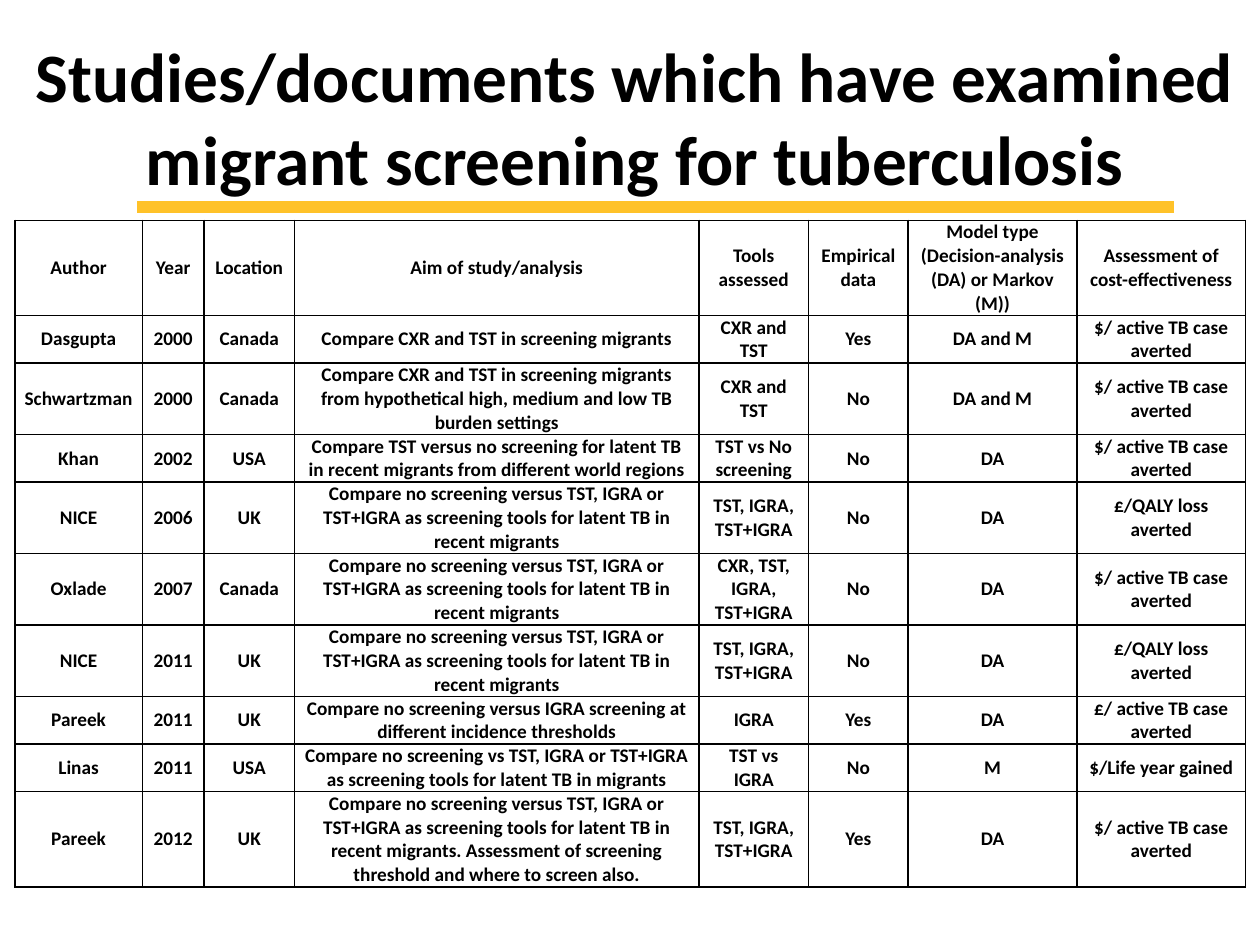
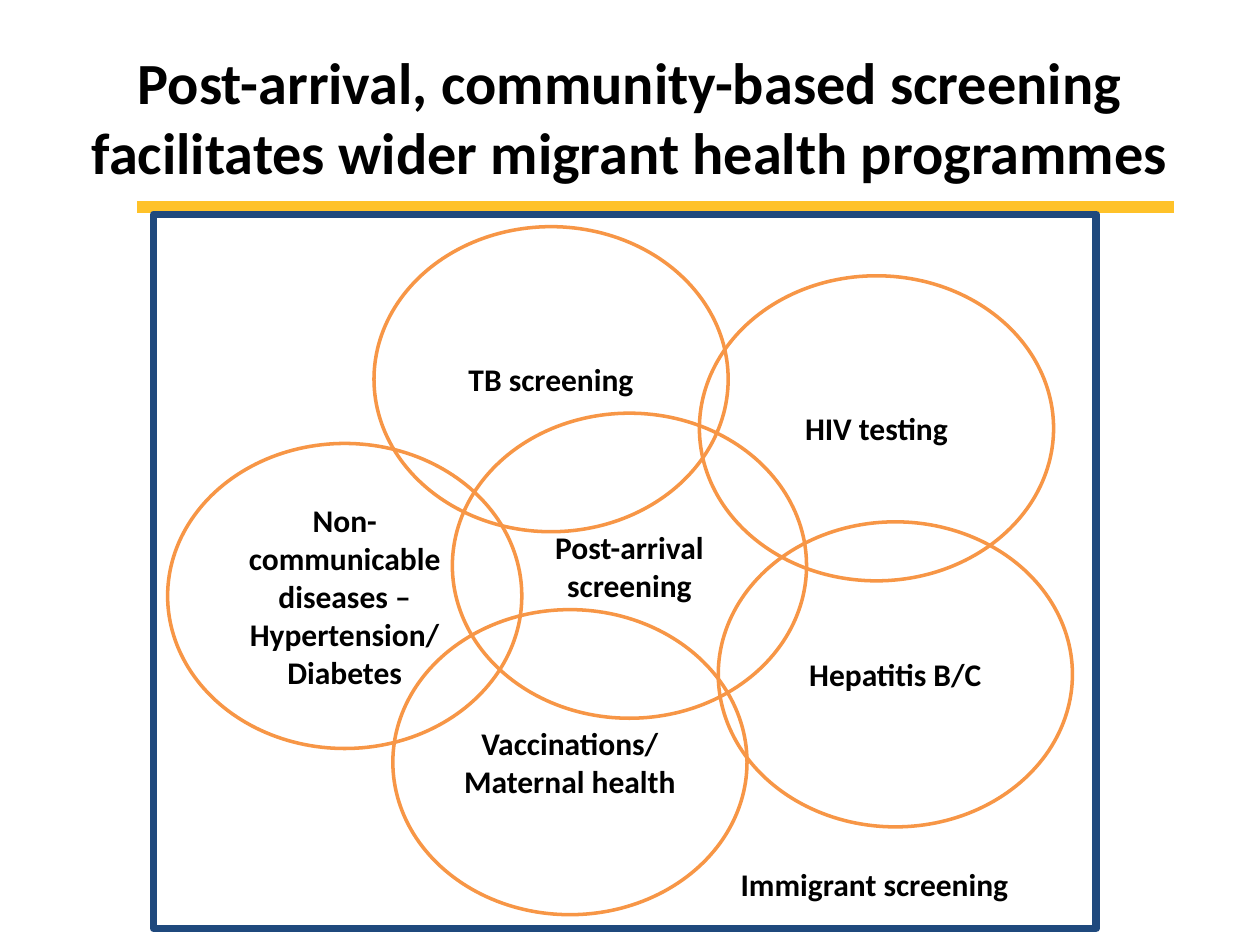
"""Build two slides on migrant screening: a table of studies and a diagram of programmes."""
from lxml.etree import SubElement
from pptx import Presentation
from pptx.dml.color import RGBColor
from pptx.enum.shapes import MSO_CONNECTOR as Link, MSO_SHAPE as Form
from pptx.enum.text import MSO_ANCHOR as Anchor, MSO_AUTO_SIZE as Fit, PP_ALIGN as Align
from pptx.oxml import parse_xml
from pptx.oxml.ns import qn
from pptx.util import Cm, Pt

FONT = "Calibri"
BLACK, WHITE, GOLD, ORANGE, NAVY = "000000", "FFFFFF", "FFC229", "F79646", "1F497D"
NS = "http://schemas.openxmlformats.org/drawingml/2006/main"

BAND = (2.77, 4.17, 23.67, 4.17)
STUDY = ("Studies/documents which have examined migrant screening for tuberculosis",
         39.6, (0.1, 0.76, 25.4, 3.18))
WIDER = ("Post-arrival, community-based screening facilitates wider migrant health programmes",
         33.3, (1.27, 0.76, 22.86, 3.18))

HEADS = ("Author", "Year", "Location", "Aim of study/analysis", "Tools assessed",
         "Empirical data", "Model type\n(Decision-analysis\n(DA) or Markov (M))",
         "Assessment of\ncost-effectiveness")
AIM = "Compare no screening versus TST, IGRA or TST+IGRA as screening tools for latent TB in recent migrants"
TRIO = "TST, IGRA, TST+IGRA"
CASE = "$/ active TB case averted"
QALY = "£/QALY loss averted"
ROWS = [
    HEADS,
    ("Dasgupta", "2000", "Canada", "Compare CXR and TST in screening migrants",
     "CXR and TST", "Yes", "DA and M", CASE),
    ("Schwartzman", "2000", "Canada",
     "Compare CXR and TST in screening migrants from hypothetical high, medium and low TB burden settings",
     "CXR and TST", "No", "DA and M", CASE),
    ("Khan", "2002", "USA",
     "Compare TST versus no screening for latent TB in recent migrants from different world regions",
     "TST vs No screening", "No", "DA", CASE),
    ("NICE", "2006", "UK", AIM, TRIO, "No", "DA", QALY),
    ("Oxlade", "2007", "Canada", AIM, "CXR, " + TRIO, "No", "DA", CASE),
    ("NICE", "2011", "UK", AIM, TRIO, "No", "DA", QALY),
    ("Pareek", "2011", "UK",
     "Compare no screening versus IGRA screening at different incidence thresholds",
     "IGRA", "Yes", "DA", "£/ active TB case averted"),
    ("Linas", "2011", "USA",
     "Compare no screening vs TST, IGRA or TST+IGRA as screening tools for latent TB in migrants",
     "TST vs IGRA", "No", "M", "$/Life year gained"),
    ("Pareek", "2012", "UK",
     AIM + ". Assessment of screening threshold and where to screen also.",
     TRIO, "Yes", "DA", CASE),
]
LINES = (4, 2, 3, 2, 3, 3, 3, 2, 2, 4)
PITCH = 0.48
COLS = (2.57, 1.24, 1.83, 8.15, 2.21, 2.01, 3.4, 3.4)
GRID = (0.3, 4.44)

OVAL = (7.14, 6.15)
RINGS = [
    ("Post-arrival screening", 9.12, 8.33, WHITE),
    ("HIV testing", 14.1, 5.56, None),
    ("Non-communicable diseases – Hypertension/\nDiabetes", 3.38, 8.94, None),
    ("Vaccinations/\nMaternal health", 7.92, 12.29, None),
    ("Hepatitis B/C", 14.48, 10.52, None),
    ("TB screening", 7.54, 4.57, None),
]
FRAME = (3.1, 4.32, 19, 14.4)
LABEL = ("Immigrant screening", (14.68, 17.32, 6.55, 1.02))


def tint(code):
    return RGBColor.from_string(code)


def cms(vals):
    return [Cm(val) for val in vals]


def write(frame, text, size, align=Align.CENTER):
    frame.word_wrap = True
    for num, line in enumerate(text.split("\n")):
        para = frame.add_paragraph() if num else frame.paragraphs[0]
        para.alignment = align
        run = para.add_run()
        run.text = line
        font = run.font
        font.name, font.size, font.bold = FONT, Pt(size), True
        font.color.rgb = tint(BLACK)


def stroke(line, code, width):
    line.color.rgb = tint(code)
    line.width = Pt(width)


def start(deck, title):
    text, size, box = title
    slide = deck.slides.add_slide(deck.slide_layouts[5])
    head = slide.shapes.title
    head.left, head.top, head.width, head.height = cms(box)
    frame = head.text_frame
    frame.auto_size = Fit.NONE
    frame.vertical_anchor = Anchor.MIDDLE
    write(frame, text, size)
    return slide


def band(slide):
    """Draw the title band and hand it to the layout, so every slide shows it."""
    line = slide.shapes.add_connector(Link.STRAIGHT, *cms(BAND))
    stroke(line.line, GOLD, 7.25)
    SubElement(line.element.spPr, qn("a:effectLst"))
    slide.slide_layout.shapes.element.append(line.element)


def edge(cell):
    props = cell._tc.get_or_add_tcPr()
    for spot, side in enumerate("LRTB"):
        props.insert(spot, parse_xml(
            f'<a:ln{side} xmlns:a="{NS}" w="{Pt(1)}"><a:solidFill>'
            f'<a:srgbClr val="{BLACK}"/></a:solidFill></a:ln{side}>'))


def table(slide):
    size = (sum(COLS), PITCH * sum(LINES))
    grid = slide.shapes.add_table(len(ROWS), len(COLS), *cms(GRID + size)).table
    grid.first_row = grid.horz_banding = False
    for col, width in zip(grid.columns, COLS):
        col.width = Cm(width)
    for row, count, texts in zip(grid.rows, LINES, ROWS):
        row.height = Cm(PITCH * count)
        for cell, text in zip(row.cells, texts):
            cell.margin_left = cell.margin_right = Cm(0.18)
            cell.margin_top = cell.margin_bottom = 0
            cell.vertical_anchor = Anchor.MIDDLE
            cell.fill.background()
            edge(cell)
            write(cell.text_frame, text, 11)


def shape(slide, form, box, code, width, fill=None):
    item = slide.shapes.add_shape(form, *cms(box))
    item.shadow.inherit = False
    if fill:
        item.fill.solid()
        item.fill.fore_color.rgb = tint(fill)
    else:
        item.fill.background()
    stroke(item.line, code, width)
    return item


def rings(slide):
    for text, left, top, fill in RINGS:
        ring = shape(slide, Form.OVAL, (left, top) + OVAL, ORANGE, 2, fill)
        ring.text_frame.vertical_anchor = Anchor.MIDDLE
        write(ring.text_frame, text, 18)
    shape(slide, Form.RECTANGLE, FRAME, NAVY, 4.25)
    text, box = LABEL
    note = slide.shapes.add_textbox(*cms(box))
    write(note.text_frame, text, 18, Align.LEFT)


def main():
    deck = Presentation()
    deck.slide_width, deck.slide_height = Cm(25.4), Cm(19.05)
    first = start(deck, STUDY)
    band(first)
    table(first)
    rings(start(deck, WIDER))
    deck.save("out.pptx")


if __name__ == "__main__":
    main()
